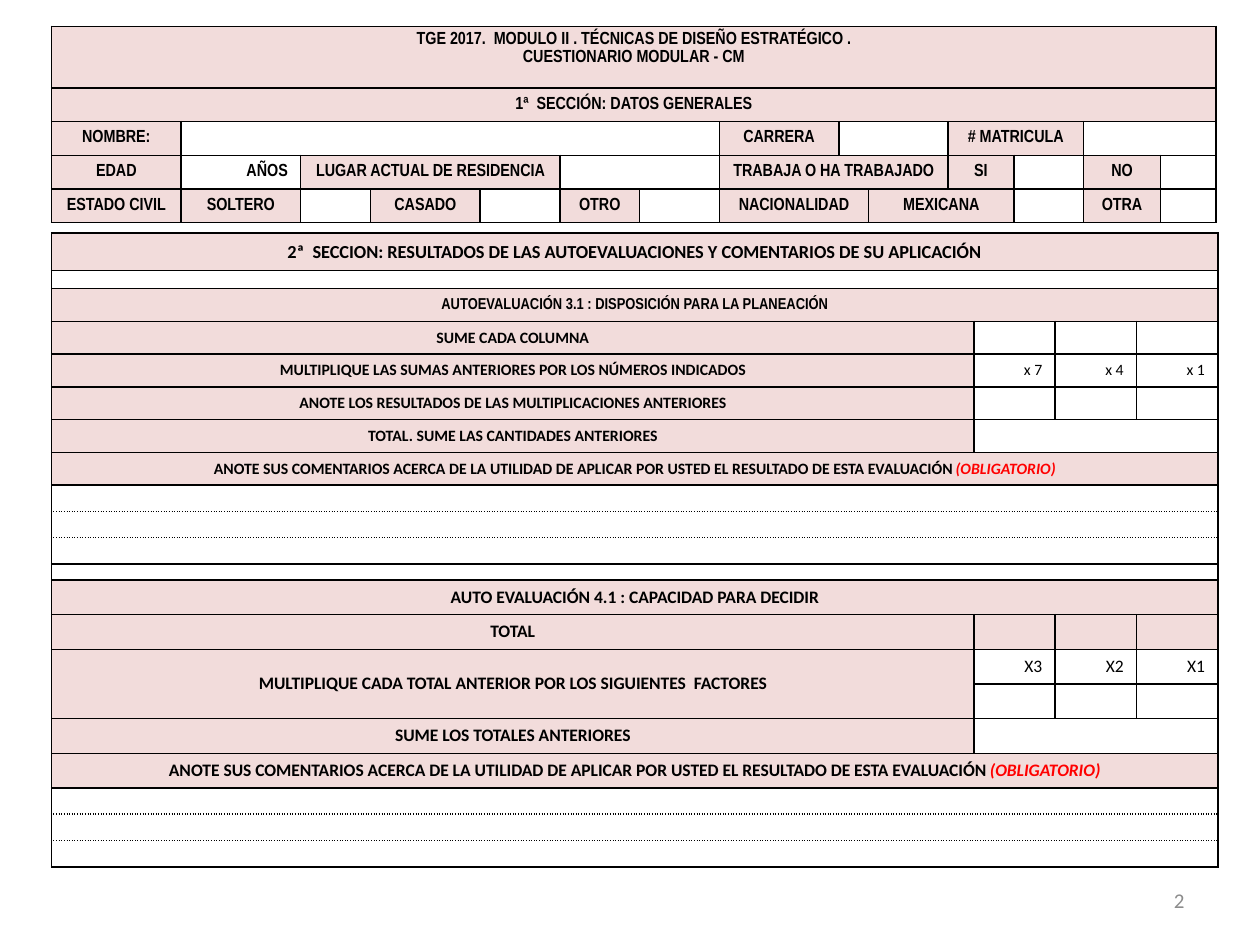
"""Build the questionnaire slide: general data and self-assessment results."""
from dataclasses import dataclass
from functools import partial

from lxml import etree
from pptx import Presentation
from pptx.dml.color import RGBColor
from pptx.enum.text import MSO_ANCHOR, PP_ALIGN
from pptx.oxml.ns import qn
from pptx.util import Cm, Pt

CENTER, RIGHT = PP_ALIGN.CENTER, PP_ALIGN.RIGHT
TOP, MIDDLE = MSO_ANCHOR.TOP, MSO_ANCHOR.MIDDLE
PINK = RGBColor(0xF2, 0xDC, 0xDB)
WHITE = RGBColor(0xFF, 0xFF, 0xFF)
BLACK = RGBColor(0, 0, 0)
RED = RGBColor(0xFF, 0, 0)
GRAY = RGBColor(0x8C, 0x8C, 0x8C)
NARROW, CALIBRI = "Arial Narrow", "Calibri"


@dataclass
class Label:
    text: str = ""
    cols: int = 1
    rows: int = 1
    note: str = ""
    fill: RGBColor = PINK
    bold: bool = True
    align: PP_ALIGN = CENTER
    anchor: MSO_ANCHOR = MIDDLE


@dataclass
class Row:
    height: float
    size: float
    font: str
    cells: list
    dotted_below: bool = False


Entry = partial(Label, fill=WHITE, bold=False, align=RIGHT)
General = partial(Row, 0.68, 10, NARROW)
Planning = partial(Row, 0.66, 9, CALIBRI)
Deciding = partial(Row, 0.7, 10, CALIBRI)

COMMENTS = Label(
    "ANOTE SUS COMENTARIOS ACERCA DE LA UTILIDAD DE APLICAR POR USTED "
    "EL RESULTADO DE ESTA EVALUACIÓN ", 4, note="(OBLIGATORIO)")
COMMENT_LINES = [Row(0.53, 8, CALIBRI, [Entry(cols=4)], dotted)
                 for dotted in (True, True, False)]

GENERAL_WIDTHS = [2.61, 2.41, 1.41, 2.21, 1.61, 1.6, 1.61,
                  2.41, 0.6, 1.6, 1.33, 1.4, 1.56, 1.11]
GENERAL_ROWS = [
    Row(1.24, 10, NARROW, [Label(
        "TGE 2017.  MODULO II . TÉCNICAS DE DISEÑO ESTRATÉGICO .\n"
        "CUESTIONARIO MODULAR - CM", 14, anchor=TOP)]),
    General([Label("1ª  SECCIÓN: DATOS GENERALES", 14)]),
    General([Label("NOMBRE:"), Entry(cols=6), Label("CARRERA"), Entry(cols=2),
             Label("# MATRICULA", 2), Entry(cols=2)]),
    General([Label("EDAD"), Entry("AÑOS", bold=True),
             Label("LUGAR ACTUAL DE RESIDENCIA", 3), Entry(cols=2),
             Label("TRABAJA O HA TRABAJADO", 3),
             Label("SI"), Entry(), Label("NO"), Entry()]),
    General([Label("ESTADO CIVIL"), Label("SOLTERO"), Entry(),
             Label("CASADO"), Entry(), Label("OTRO"), Entry(),
             Label("NACIONALIDAD", 2), Label("MEXICANA", 2), Entry(),
             Label("OTRA"), Entry()]),
]

RESULT_WIDTHS = [18.59, 1.64, 1.64, 1.64]
RESULT_ROWS = [
    Row(0.75, 10.5, CALIBRI, [Label(
        "2ª  SECCION: RESULTADOS DE LAS AUTOEVALUACIONES Y COMENTARIOS "
        "DE SU APLICACIÓN", 4)]),
    Row(0.37, 4, CALIBRI, [Entry(cols=4)]),
    Row(0.66, 9, NARROW,
        [Label("AUTOEVALUACIÓN 3.1 : DISPOSICIÓN PARA LA PLANEACIÓN", 4)]),
    Planning([Label("SUME CADA COLUMNA"), Entry(), Entry(), Entry()]),
    Planning([Label("MULTIPLIQUE LAS SUMAS ANTERIORES POR LOS NÚMEROS INDICADOS"),
              Entry("x 7"), Entry("x 4"), Entry("x 1")]),
    Planning([Label("ANOTE LOS RESULTADOS DE LAS MULTIPLICACIONES ANTERIORES"),
              Entry(), Entry(), Entry()]),
    Planning([Label("TOTAL. SUME LAS CANTIDADES ANTERIORES"), Entry(cols=3)]),
    Planning([COMMENTS]),
    *COMMENT_LINES,
    Row(0.32, 4, CALIBRI, [Entry(cols=4)]),
    Deciding([Label("AUTO EVALUACIÓN 4.1 : CAPACIDAD PARA DECIDIR", 4)]),
    Deciding([Label("TOTAL"), Label(), Label(), Label()]),
    Deciding([Label("MULTIPLIQUE CADA TOTAL ANTERIOR POR LOS SIGUIENTES  FACTORES",
                    rows=2), Entry("X3"), Entry("X2"), Entry("X1")]),
    Deciding([None, Entry(), Entry(), Entry()]),
    Deciding([Label("SUME LOS TOTALES ANTERIORES"), Entry(cols=3)]),
    Deciding([COMMENTS]),
    *COMMENT_LINES,
]


def format_run(run, font, size, color, bold=False, italic=False):
    run.font.name, run.font.size = font, Pt(size)
    run.font.color.rgb = color
    run.font.bold, run.font.italic = bold, italic


def add_borders(cell, dotted_sides):
    properties = cell._tc.get_or_add_tcPr()
    for side in "LRTB":
        line = etree.SubElement(properties, qn(f"a:ln{side}"), w=str(Pt(1)))
        fill = etree.SubElement(line, qn("a:solidFill"))
        etree.SubElement(fill, qn("a:srgbClr"), val=str(BLACK))
        dash = "sysDot" if side in dotted_sides else "solid"
        etree.SubElement(line, qn("a:prstDash"), val=dash)


def write_cell(cell, content, row):
    cell.vertical_anchor = content.anchor
    cell.margin_left = cell.margin_right = Cm(0.26)
    cell.margin_top = cell.margin_bottom = Cm(0.12 if content.text else 0)
    cell.text_frame.text = content.text
    paragraphs = cell.text_frame.paragraphs
    for paragraph in paragraphs:
        paragraph.alignment = content.align
        for run in paragraph.runs:
            format_run(run, row.font, row.size, BLACK, content.bold)
    for paragraph in paragraphs[1:]:
        paragraph.space_before = Pt(1)
    if content.note:
        note = paragraphs[-1].add_run()
        note.text = content.note
        format_run(note, row.font, row.size, RED, True, True)
    if not content.text:
        etree.SubElement(paragraphs[0]._p, qn("a:endParaRPr"),
                         sz=str(int(row.size * 100)))


def add_form(slide, left, top, widths, rows):
    table = slide.shapes.add_table(
        len(rows), len(widths), Cm(left), Cm(top), Cm(sum(widths)),
        Cm(sum(row.height for row in rows))).table
    table.first_row = table.horz_banding = False
    for column, width in zip(table.columns, widths):
        column.width = Cm(width)
    dotted_above = False
    for r, row in enumerate(rows):
        table.rows[r].height = Cm(row.height)
        dotted_sides = "T" * dotted_above + "B" * row.dotted_below
        dotted_above = row.dotted_below
        c = 0
        for content in row.cells:
            span = content.cols if content else 1
            fill = content.fill if content else PINK
            for k in range(c, c + span):
                covered = table.cell(r, k)
                add_borders(covered, dotted_sides)
                covered.fill.solid()
                covered.fill.fore_color.rgb = fill
            if content:
                cell = table.cell(r, c)
                write_cell(cell, content, row)
                if span > 1 or content.rows > 1:
                    cell.merge(table.cell(r + content.rows - 1, c + span - 1))
            c += span


def add_page_number(slide, number):
    box = slide.shapes.add_textbox(Cm(18.2), Cm(17.65), Cm(5.93), Cm(1.01))
    frame = box.text_frame
    frame.word_wrap = True
    frame.vertical_anchor = MIDDLE
    frame.text = number
    frame.paragraphs[0].alignment = RIGHT
    format_run(frame.paragraphs[0].runs[0], CALIBRI, 12, GRAY)


def main():
    deck = Presentation()
    deck.slide_width, deck.slide_height = Cm(25.4), Cm(19.05)
    slide = deck.slides.add_slide(deck.slide_layouts[6])
    add_form(slide, 1.04, 4.7, RESULT_WIDTHS, RESULT_ROWS)
    add_page_number(slide, "2")
    add_form(slide, 1.04, 0.53, GENERAL_WIDTHS, GENERAL_ROWS)
    deck.save("out.pptx")


if __name__ == "__main__":
    main()
